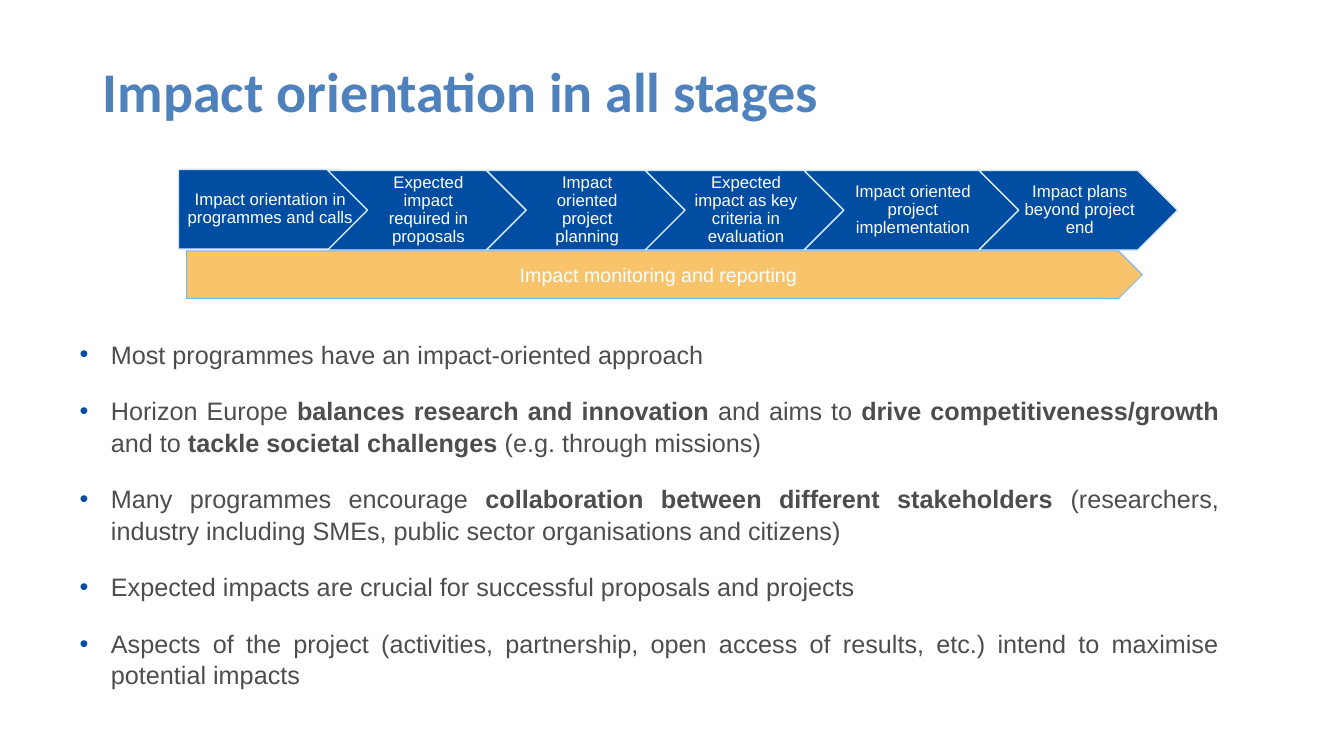
from dataclasses import dataclass

from lxml import etree
from pptx import Presentation
from pptx.dml.color import RGBColor
from pptx.enum.shapes import MSO_SHAPE
from pptx.enum.text import MSO_ANCHOR, MSO_AUTO_SIZE, PP_ALIGN
from pptx.oxml.ns import qn
from pptx.util import Inches, Pt

PENTAGON, CHEVRON = MSO_SHAPE.PENTAGON, MSO_SHAPE.CHEVRON
TOP, MIDDLE = MSO_ANCHOR.TOP, MSO_ANCHOR.MIDDLE
LEFT, CENTER, JUSTIFY = PP_ALIGN.LEFT, PP_ALIGN.CENTER, PP_ALIGN.JUSTIFY


@dataclass(frozen=True)
class Theme:
    title_font: str = "Calibri"
    text_font: str = "Arial"
    title: str = "4F81BD"
    body: str = "4D4D4D"
    bullet: str = "034EA2"
    stage: str = "004DA2"
    stage_line: str = "D1E8F8"
    monitoring: str = "F7C46C"
    monitoring_line: str = "76B6FC"
    white: str = "FFFFFF"
    title_size: int = 40
    body_size: int = 18
    monitoring_size: int = 14
    stage_size: int = 12


THEME = Theme()


def style_font(font, name, size, color, bold=False):
    font.name, font.size, font.bold = name, Pt(size), bold
    font.color.rgb = RGBColor.from_string(color)


def add_arrow(shapes, kind, box, text, fill, line, line_width, size, insets):
    """Add a block arrow with centred white text; insets run left, top, right, bottom."""
    shape = shapes.add_shape(kind, *map(Inches, box))
    shape.shadow.inherit = False
    shape.adjustments[0] = 0.5
    shape.fill.solid()
    shape.fill.fore_color.rgb = RGBColor.from_string(fill)
    shape.line.color.rgb = RGBColor.from_string(line)
    shape.line.width = Pt(line_width)
    frame = shape.text_frame
    frame.word_wrap = True
    frame.vertical_anchor = MIDDLE
    frame.margin_left, frame.margin_top, frame.margin_right, frame.margin_bottom = map(Inches, insets)
    frame.text = text
    paragraph = frame.paragraphs[0]
    paragraph.alignment = CENTER
    style_font(paragraph.runs[0].font, THEME.text_font, size, THEME.white)
    return paragraph


presentation = Presentation()
presentation.slide_width, presentation.slide_height = Inches(13.33), Inches(7.5)
slide = presentation.slides.add_slide(presentation.slide_layouts[1])

# Title
title = slide.shapes.title
title.left, title.top, title.width, title.height = map(Inches, (0.92, 0.51, 11.5, 0.66))
title_frame = title.text_frame
title_frame.text = "Impact orientation in all stages"
title_frame.auto_size = MSO_AUTO_SIZE.NONE
title_frame.vertical_anchor = TOP
title_frame.margin_bottom = 0
title_frame.paragraphs[0].alignment = LEFT
style_font(title_frame.paragraphs[0].runs[0].font, THEME.title_font, THEME.title_size, THEME.title, True)

# Stages: each chevron's tip fits into the notch of the next
STAGE_HEIGHT, STAGE_WIDTH, WIDE_STAGE = 0.79, 1.97, 2.13
stages = [
    ("Expected impact required in proposals", STAGE_WIDTH),
    ("Impact oriented project planning", STAGE_WIDTH),
    ("Expected impact as key criteria in evaluation", STAGE_WIDTH),
    ("Impact oriented project implementation", WIDE_STAGE),
    ("Impact plans beyond project end", STAGE_WIDTH),
]
arrows = [(PENTAGON, (1.77, 1.68, STAGE_WIDTH, STAGE_HEIGHT),
           "Impact orientation in programmes and calls", 0.07)]
stage_left = 3.25
for text, width in stages:
    arrows.append((CHEVRON, (stage_left, 1.69, width, STAGE_HEIGHT), text, 0.05))
    stage_left += width - STAGE_HEIGHT / 2

stage_group = slide.shapes.add_group_shape()
for kind, box, text, left_inset in arrows:
    paragraph = add_arrow(stage_group.shapes, kind, box, text, THEME.stage, THEME.stage_line, 1,
                          THEME.stage_size, (left_inset, 0.03, 0.02, 0.03))
    paragraph.line_spacing = 0.9

add_arrow(slide.shapes, PENTAGON, (1.85, 2.49, 9.48, 0.47), "Impact monitoring and reporting",
          THEME.monitoring, THEME.monitoring_line, 0.75, THEME.monitoring_size, (0.1, 0.05, 0.1, 0.05))

# Bullet list: within each entry, plain and bold runs alternate
bullets = [
    ["Most programmes have an impact-oriented approach"],
    ["Horizon Europe ", "balances research and innovation ", "and aims to ",
     "drive competitiveness/growth ", "and to ", "tackle societal challenges ",
     "(e.g. through missions)"],
    ["Many programmes encourage ", "collaboration between different stakeholders ",
     "(researchers, industry including SMEs, public sector organisations and citizens)"],
    ["Expected impacts are crucial for successful proposals and projects"],
    ["Aspects of the project (activities, partnership, open access of results, etc.) "
     "intend to maximise potential impacts"],
]
body = slide.placeholders[1]
body.left, body.top, body.width, body.height = map(Inches, (0.69, 3.3, 11.5, 3.08))
body_frame = body.text_frame
body_frame.auto_size = MSO_AUTO_SIZE.NONE
body_frame.vertical_anchor = TOP
for index, runs in enumerate(bullets):
    paragraph = body_frame.add_paragraph() if index else body_frame.paragraphs[0]
    paragraph.alignment = JUSTIFY
    paragraph.line_spacing = 1.04
    paragraph.space_before = Pt(18 if index else 0)
    properties = paragraph._p.get_or_add_pPr()
    properties.set("marL", str(Inches(0.31)))
    properties.set("indent", str(-Inches(0.31)))
    bullet_color = etree.SubElement(properties, qn("a:buClr"))
    etree.SubElement(bullet_color, qn("a:srgbClr"), val=THEME.bullet)
    etree.SubElement(properties, qn("a:buFont"), typeface=THEME.text_font)
    etree.SubElement(properties, qn("a:buChar"), char="•")
    for position, text in enumerate(runs):
        run = paragraph.add_run()
        run.text = text
        style_font(run.font, THEME.text_font, THEME.body_size, THEME.body, position % 2 == 1)

presentation.save("out.pptx")
